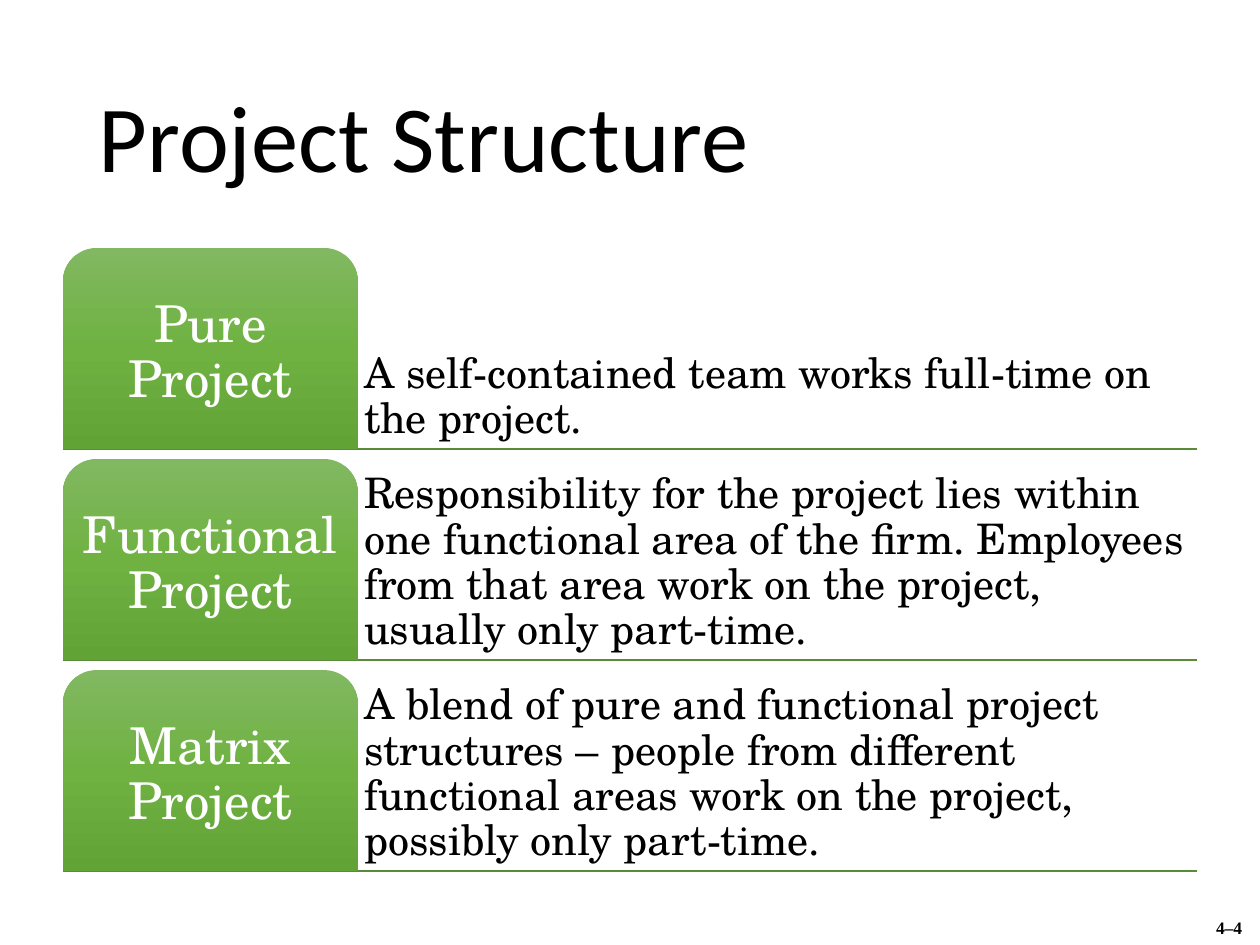
import copy

import pptx
import pptx.dml.color
import pptx.enum.shapes
import pptx.enum.text
import pptx.oxml.ns
import pptx.util
from lxml import etree

Pt = pptx.util.Pt
ALIGN = pptx.enum.text.PP_ALIGN
ANCHOR = pptx.enum.text.MSO_ANCHOR

COLORS = {
    "text": "000000",
    "label": "FFFFFF",
    "rule": "5A8B39",
    "tab_top": "81B861",
    "tab_middle": "6FB242",
    "tab_bottom": "62A336",
}
BODY_FONT = "TeX Gyre Schola"

# Row grid, in points
LEFT, RIGHT = 36, 684
FIRST_TOP, ROW_PITCH, ROW_HEIGHT = 141.7, 120.6, 114.9
TAB_WIDTH = 168.5
LABEL_MARGIN = 5.6

STRUCTURES = [
    ("Pure Project", "A self-contained team works full-time on the project."),
    ("Functional Project",
     "Responsibility for the project lies within one functional area of the firm. "
     "Employees from that area work on the project, usually only part-time."),
    ("Matrix Project",
     "A blend of pure and functional project structures – people from different "
     "functional areas work on the project, possibly only part-time."),
]


def rgb(name):
    return pptx.dml.color.RGBColor.from_string(COLORS[name])


def add_text(slide, text, left, top, width, height, *, size, font=BODY_FONT,
             color="text", bold=False, align=ALIGN.LEFT, anchor=ANCHOR.TOP,
             inset=None, spacing=None, wrap=True):
    box = slide.shapes.add_textbox(Pt(left), Pt(top), Pt(width), Pt(height))
    frame = box.text_frame
    frame.word_wrap = wrap
    frame.vertical_anchor = anchor
    if inset is not None:
        frame.margin_left = frame.margin_right = Pt(inset)
        frame.margin_top = frame.margin_bottom = Pt(inset)
    paragraph = frame.paragraphs[0]
    paragraph.alignment = align
    paragraph.line_spacing = spacing
    run = paragraph.add_run()
    run.text = text
    run.font.name = font
    run.font.size = Pt(size)
    run.font.bold = bold
    run.font.color.rgb = rgb(color)


def add_rule(slide, y):
    rule = slide.shapes.add_connector(
        pptx.enum.shapes.MSO_CONNECTOR.STRAIGHT, Pt(LEFT), Pt(y), Pt(RIGHT), Pt(y))
    rule.line.color.rgb = rgb("rule")
    rule.line.width = Pt(1)
    etree.SubElement(rule._element.spPr, pptx.oxml.ns.qn("a:effectLst"))


def add_tab(slide, top):
    tab = slide.shapes.add_shape(
        pptx.enum.shapes.MSO_SHAPE.ROUND_2_SAME_RECTANGLE,
        Pt(LEFT), Pt(top), Pt(TAB_WIDTH), Pt(ROW_HEIGHT))
    tab.adjustments[0] = 0.167
    tab.adjustments[1] = 0
    tab.shadow.inherit = False
    tab.line.fill.background()
    tab.fill.gradient()
    tab.fill.gradient_angle = 270
    # The default gradient has two stops; add a third
    stops = tab._element.spPr.find(".//" + pptx.oxml.ns.qn("a:gsLst"))
    stops.insert(1, copy.deepcopy(stops[0]))
    shades = [(0, "tab_top"), (0.5, "tab_middle"), (1, "tab_bottom")]
    for stop, (position, color) in zip(tab.fill.gradient_stops, shades):
        stop.position = position
        stop.color.rgb = rgb(color)


def add_structure(slide, top, label, description):
    add_text(slide, description, LEFT + TAB_WIDTH, top,
             RIGHT - LEFT - TAB_WIDTH, ROW_HEIGHT,
             size=24, anchor=ANCHOR.BOTTOM, inset=3.6, spacing=0.9)
    add_tab(slide, top)
    add_text(slide, label, LEFT + LABEL_MARGIN, top + LABEL_MARGIN,
             TAB_WIDTH - 2 * LABEL_MARGIN, ROW_HEIGHT - LABEL_MARGIN,
             size=29, color="label", align=ALIGN.CENTER, anchor=ANCHOR.MIDDLE,
             inset=4.3, spacing=0.9)


def main():
    deck = pptx.Presentation()
    deck.slide_width, deck.slide_height = Pt(720), Pt(540)
    slide = deck.slides.add_slide(deck.slide_layouts[6])

    # Page number and title
    add_text(slide, "4–4", 684, 520.6, 36.7, 19.4, size=10, bold=True,
             font="Times New Roman", align=ALIGN.CENTER, wrap=False)
    add_text(slide, "Project Structure", 49.5, 28.8, 621, 104.4, size=54,
             font="Calibri", anchor=ANCHOR.MIDDLE, spacing=0.9)

    # Rules lie behind the rows
    tops = [FIRST_TOP + row * ROW_PITCH for row in range(len(STRUCTURES))]
    for top in tops:
        add_rule(slide, top + ROW_HEIGHT)
    for top, (label, description) in zip(tops, STRUCTURES):
        add_structure(slide, top, label, description)

    deck.save("out.pptx")


if __name__ == "__main__":
    main()
